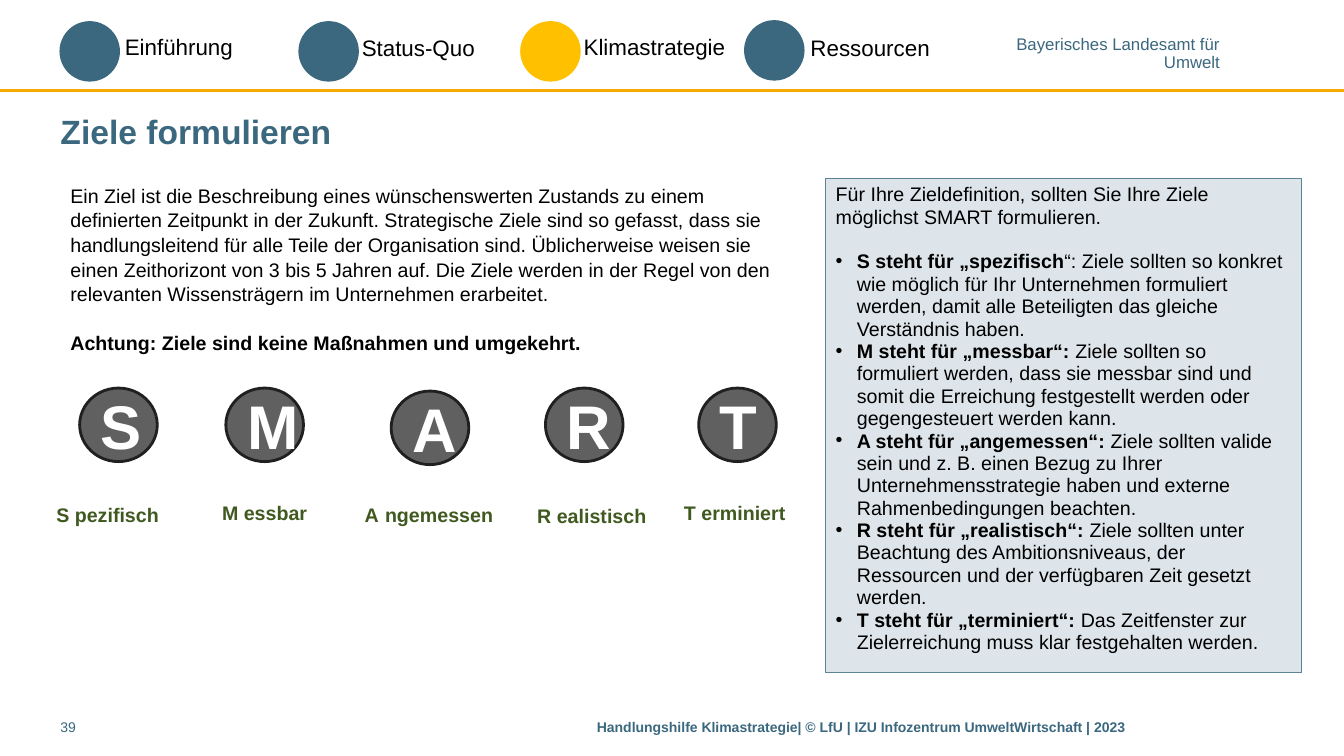
from lxml import etree
from pptx import Presentation
from pptx import util as u
from pptx.dml import color
from pptx.enum import shapes, text
from pptx.oxml import ns

PX = 9144
BLUE, YELLOW, BLACK = "3B687F", "FFC000", "000000"
rgb = color.RGBColor.from_string

deck = Presentation()
deck.slide_width, deck.slide_height = 1333 * PX, 750 * PX
slide = deck.slides.add_slide(deck.slide_layouts[6])


def draw(box, kind=None, fill=None, line=None, width=1):
    area = [value * PX for value in box]
    if kind is None:
        return slide.shapes.add_textbox(*area)
    shape = slide.shapes.add_shape(kind, *area)
    shape.shadow.inherit = False
    shape.fill.solid()
    shape.fill.fore_color.rgb = rgb(fill)
    if line:
        shape.line.color.rgb = rgb(line)
        shape.line.width = u.Pt(width)
    else:
        shape.line.fill.background()
    return shape


def write(shape, paragraphs, size, ink, bold=False, frame={}, layout={}):
    body = shape.text_frame
    for key, value in {"word_wrap": True, **frame}.items():
        setattr(body, key, value)
    for index, runs in enumerate(paragraphs):
        paragraph = body.add_paragraph() if index else body.paragraphs[0]
        for key, value in {"alignment": text.PP_ALIGN.LEFT, **layout}.items():
            setattr(paragraph, key, value)
        for words, changes in runs:
            run = paragraph.add_run()
            run.text = words
            run.font.color.rgb = rgb(ink)
            for key, value in {"name": "Arial", "size": u.Pt(size), "bold": bold, **changes}.items():
                setattr(run.font, key, value)
    return body.paragraphs


flush = {"margin_left": 0, "margin_right": 0}
middle = {"vertical_anchor": text.MSO_ANCHOR.MIDDLE}
to_right = {"alignment": text.PP_ALIGN.RIGHT}
to_center = {"alignment": text.PP_ALIGN.CENTER}
strong = {"bold": True}

header_rule = slide.shapes.add_connector(shapes.MSO_CONNECTOR.STRAIGHT, 0, 90 * PX, 1333 * PX, 90 * PX)
header_rule.line.color.rgb = rgb("F9AA00")
header_rule.line.width = u.Pt(2)
etree.SubElement(header_rule._element.spPr, ns.qn("a:effectLst"))

write(draw((1007, 37, 203, 34)), [[("Bayerisches Landesamt für", {})], [("Umwelt", {})]], 12, BLUE,
      frame={**flush, "margin_top": 0, "margin_bottom": 0, "word_wrap": False},
      layout={**to_right, "line_spacing": 0.85})

chapters = [
    ("Einführung", 59, 21, BLUE, 114, 28, 136),
    ("Status-Quo", 296, 21, BLUE, 349, 29, 136),
    ("Klimastrategie", 516, 21, YELLOW, 569, 28, 295),
    ("Ressourcen", 738, 20, BLUE, 794, 29, 295),
]
for chapter, dot_left, dot_top, tone, left, top, width in chapters:
    draw((dot_left, dot_top, 60, 60), shapes.MSO_SHAPE.OVAL, tone)
    write(draw((left, top, width, 37)), [[(chapter, {})]], 16, BLACK)

write(draw((60, 102, 1231, 55)), [[("Ziele formulieren", {})]], 24, BLUE, True, {**flush, **middle})
write(draw((592, 708, 699, 31)),
      [[("Handlungshilfe Klimastrategie| © LfU | IZU Infozentrum UmweltWirtschaft | 2023", {})]],
      10, BLUE, True, flush)
write(draw((60, 708, 70, 31)), [[("39", {})]], 10, BLUE, frame=flush)

criteria = [
    ("S", "pezifisch ", 79, 385, (43, 494, 130, 34), 14),
    ("M", "essbar ", 224, 385, (200, 492, 120, 34), 14),
    ("A", "ngemessen", 388, 388, (333, 491, 166, 37), 16),
    ("R", "ealistisch", 541, 385, (499, 495, 152, 34), 14),
    ("T", "erminiert", 693, 385, (656, 492, 133, 34), 14),
]
for letter, ending, left, top, label, gap_size in criteria:
    badge = draw((left, top, 77, 73), shapes.MSO_SHAPE.OVAL, "606060", "202020", 2)
    write(badge, [[(letter, {})]], 44, "FFFFFF", True, middle, to_center)
    write(draw(label), [[(letter, {}), (" ", {"size": u.Pt(gap_size)}), (ending, {})]],
          14, "40591F", True, layout=to_right)

definitions = [
    ("S steht für „spezifisch", "“: Ziele sollten so konkret wie möglich für Ihr Unternehmen formuliert werden, "
     "damit alle Beteiligten das gleiche Verständnis haben."),
    ("M steht für „messbar“: ", "Ziele sollten so formuliert werden, dass sie messbar sind und somit die "
     "Erreichung festgestellt werden oder gegengesteuert werden kann."),
    ("A steht für „angemessen“: ", "Ziele sollten valide sein und z. B. einen Bezug zu Ihrer "
     "Unternehmensstrategie haben und externe Rahmenbedingungen beachten."),
    ("R steht für „realistisch“: ", "Ziele sollten unter Beachtung des Ambitionsniveaus, der Ressourcen und "
     "der verfügbaren Zeit gesetzt werden."),
    ("T steht für „terminiert“: ", "Das Zeitfenster zur Zielerreichung muss klar festgehalten werden."),
]
smart_panel = draw((819, 177, 472, 490), shapes.MSO_SHAPE.RECTANGLE, "DEE5EA", "5C8395")
advice = [[("Für Ihre Zieldefinition, sollten Sie Ihre Ziele möglichst SMART formulieren.", {})]]
advice += [[(term, strong), (meaning, {})] for term, meaning in definitions]
smart_lines = write(smart_panel, advice, 14, BLACK, frame={"vertical_anchor": text.MSO_ANCHOR.TOP},
                    layout={"line_spacing": u.Pt(16)})
smart_lines[1].space_before = u.Pt(16)
for line in smart_lines[1:]:
    properties = line._p.get_or_add_pPr()
    properties.set("marL", str(21 * PX))
    properties.set("indent", str(-21 * PX))
    etree.SubElement(properties, ns.qn("a:buFont"), typeface="Arial")
    etree.SubElement(properties, ns.qn("a:buChar"), char="•")

explanation = (
    "Ein Ziel ist die Beschreibung eines wünschenswerten Zustands zu einem definierten Zeitpunkt in der "
    "Zukunft. Strategische Ziele sind so gefasst, dass sie handlungsleitend für alle Teile der Organisation "
    "sind. Üblicherweise weisen sie einen Zeithorizont von 3 bis 5 Jahren auf. Die Ziele werden in der Regel "
    "von den relevanten Wissensträgern im Unternehmen erarbeitet."
)
warning = "Achtung: Ziele sind keine Maßnahmen und umgekehrt."
goal_lines = write(draw((60, 176, 740, 175)), [[(explanation, {})], [(warning, strong)]], 14, BLACK,
                   layout={"line_spacing": 1.05})
goal_lines[1].space_before = u.Pt(17)

deck.save("out.pptx")
